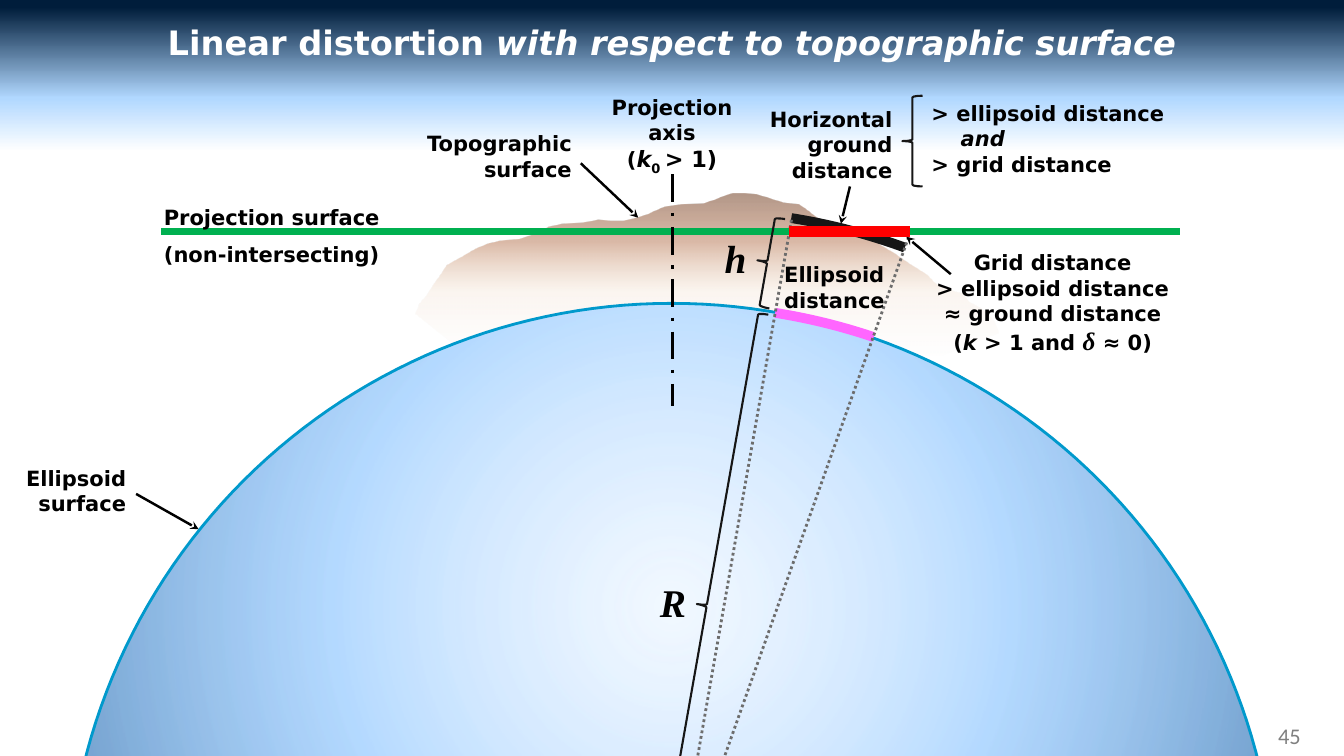
from dataclasses import dataclass
from math import cos, pi, sin

from lxml.etree import SubElement
from pptx import Presentation
from pptx.dml.color import RGBColor as RGB
from pptx.enum.dml import MSO_LINE as DASH
from pptx.enum.shapes import MSO_CONNECTOR as LINK, MSO_SHAPE as FORM
from pptx.enum.text import MSO_ANCHOR as ANCHOR, MSO_AUTO_SIZE as FIT, PP_ALIGN as ALIGN
from pptx.oxml.ns import qn
from pptx.util import Inches, Pt


@dataclass
class Theme:
    font: str = "DejaVu Sans"
    math: str = "Times New Roman"
    plain: str = "Calibri"
    title: int = 24
    label: int = 15
    axis: int = 16
    delta: int = 18
    symbol: int = 28
    black: str = "000000"
    white: str = "FFFFFF"
    dark: str = "161616"
    gray: str = "6D6D6D"
    number: str = "808080"
    green: str = "00B050"
    red: str = "FF0000"
    pink: str = "FF66FF"
    rim: str = "0099CC"


T = Theme()


def write(shape, text, align=ALIGN.LEFT, space=1, indent=None, **base):
    """Fill a shape with text: a string, or (string, format) runs; \\n starts a paragraph."""
    frame = shape.text_frame
    frame.word_wrap = True
    frame.auto_size = FIT.NONE
    runs = [(text, {})] if isinstance(text, str) else text
    para = frame.paragraphs[0]
    paras = [para]
    for part, own in runs:
        look = {"size": T.label, "font": T.font, "color": T.black, "bold": True, **base, **own}
        for n, line in enumerate(part.split("\n")):
            if n:
                para = frame.add_paragraph()
                paras.append(para)
            if not line:
                continue
            run = para.add_run()
            run.text = line
            font = run.font
            font.name, font.size = look["font"], Pt(look["size"])
            font.bold, font.italic = look["bold"], look.get("italic", False)
            font.color.rgb = RGB.from_string(look["color"])
            if "shift" in look:
                font._element.set("baseline", str(look["shift"]))
    for n, para in enumerate(paras):
        para.alignment, para.line_spacing = align, space
        if indent and n == indent[0]:
            para._p.get_or_add_pPr().set("marL", str(Inches(indent[1])))


def stroke(shape, color, width, dash=None, arrow=False):
    line = shape.line
    line.color.rgb, line.width = RGB.from_string(color), Pt(width)
    if dash:
        line.dash_style = dash
    props = shape.element.spPr
    if arrow:
        SubElement(props.find(qn("a:ln")), qn("a:tailEnd"), type="stealth")
    if props.find(qn("a:effectLst")) is None:
        SubElement(props, qn("a:effectLst"))


deck = Presentation()
deck.slide_width, deck.slide_height = Inches(13.33), Inches(7.5)
slide = deck.slides.add_slide(deck.slide_layouts[5])
shapes = slide.shapes

# Title
title = shapes.title
title.left, title.top, title.width, title.height = map(Inches, (0, 0.17, 13.33, 0.5))
title.text_frame.vertical_anchor = ANCHOR.MIDDLE
write(title, [("Linear distortion ", {}),
              ("with respect to topographic surface", {"italic": True})],
      ALIGN.CENTER, size=T.title, color=T.white)

# Terrain and globe
ridge = [
    (4.66, 3.54), (4.12, 3.11), (4.16, 3.01), (4.23, 2.93), (4.3, 2.82), (4.38, 2.71),
    (4.43, 2.63), (4.52, 2.58), (4.61, 2.53), (4.71, 2.47), (4.83, 2.42), (4.95, 2.39),
    (5.15, 2.37), (5.25, 2.34), (5.34, 2.3), (5.44, 2.25), (5.57, 2.22), (5.78, 2.21),
    (5.93, 2.18), (6.05, 2.19), (6.18, 2.19), (6.28, 2.17), (6.41, 2.13), (6.5, 2.09),
    (6.59, 2.05), (6.75, 2.03), (6.97, 2.02), (7.09, 1.98), (7.19, 1.94), (7.26, 1.92),
    (7.38, 1.92), (7.5, 1.93), (7.6, 1.96), (7.76, 2.01), (7.92, 2.03), (7.98, 2.07),
    (8.07, 2.14), (8.14, 2.19), (8.26, 2.24), (8.33, 2.27), (8.49, 2.3), (8.58, 2.33),
    (8.65, 2.38), (8.74, 2.44), (8.86, 2.51), (8.96, 2.58), (9.02, 2.62), (9.18, 2.72),
    (9.27, 2.81), (9.36, 2.86), (9.54, 2.91), (9.6, 2.99), (9.73, 3.06), (9.85, 3.18),
    (9.9, 3.3), (9.3, 3.54)]
steps = 120
dome = [(6.66 - 6 * cos(pi * n / steps), 9.01 - 6 * sin(pi * n / steps))
        for n in range(steps + 1)]
solids = []
for points in (ridge, dome, dome):
    spots = [(Inches(x), Inches(y)) for x, y in points]
    pen = shapes.build_freeform(*spots[0])
    pen.add_line_segments(spots[1:])
    solid = pen.convert_to_shape()
    solid.shadow.inherit = False
    solid.line.fill.background()
    solids.append(solid)
hill, base, globe = solids
base.fill.solid()
base.fill.fore_color.rgb = RGB.from_string(T.white)
stroke(globe, T.rim, 2)

# Gradients: stops are position, colour, opacity; no angle means radial
for item, fill, stops, angle in [
    (slide, slide.background.fill,
     [(80, "FFFFFF", 100), (87, "B1D8FF", 100), (99, "001D3B", 100)], 270),
    (hill, hill.fill,
     [(0, "D6B19C", 0), (40, "D49E6C", 10), (70, "A65528", 40), (100, "663012", 50)], 270),
    (globe, globe.fill,
     [(0, "C2E0FF", 20), (50, "47A3FF", 40), (100, "004C99", 60)], None),
]:
    fill.gradient()
    grad = item.element.find(".//" + qn("a:gradFill"))
    grad.clear()
    grad.set("rotWithShape", "1")
    ramp = SubElement(grad, qn("a:gsLst"))
    for place, color, alpha in stops:
        stop = SubElement(ramp, qn("a:gs"), pos=str(place * 1000))
        tint = SubElement(stop, qn("a:srgbClr"), val=color)
        if alpha < 100:
            SubElement(tint, qn("a:alpha"), val=str(alpha * 1000))
    if angle is None:
        way = SubElement(grad, qn("a:path"), path="circle")
        SubElement(way, qn("a:fillToRect"), {side: "50000" for side in "ltrb"})
    else:
        SubElement(grad, qn("a:lin"), ang=str(angle * 60000), scaled="0")

# Distances along the ellipsoid and ground: arcs from the top, sweep in degrees
for left, top, sweep, color in [(0.75, 3.03, 9.61, T.pink), (0.91, 2.09, 11.13, T.dark)]:
    arc = shapes.add_shape(FORM.ARC, *map(Inches, (left, top, 12, 12)))
    arc.rotation = 9
    arc.adjustments[0], arc.adjustments[1] = 270 * 0.6, (270 + sweep) * 0.6
    arc.fill.background()
    stroke(arc, color, 7)

# Straight lines
arrow = {"color": T.black, "width": 1.75, "arrow": True}
radius = {"color": T.gray, "width": 2, "dash": DASH.ROUND_DOT}
for x1, y1, x2, y2, look in [
    (9.03, 2.3, 6.66, 8.99, radius),
    (7.85, 2.18, 6.66, 8.99, radius),
    (1.6, 2.3, 11.7, 2.3, {"color": T.green, "width": 5}),
    (6.67, 1.73, 6.67, 4.03, {"color": T.black, "width": 2.5, "dash": DASH.LONG_DASH_DOT}),
    (5.76, 1.62, 6.33, 2.16, arrow),
    (8.43, 1.85, 8.34, 2.22, arrow),
    (9.43, 2.72, 8.99, 2.35, arrow),
    (1.35, 4.9, 1.97, 5.25, arrow),
    (7.83, 2.3, 9.03, 2.3, {"color": T.red, "width": 8}),
]:
    stroke(shapes.add_connector(LINK.STRAIGHT, *map(Inches, (x1, y1, x2, y2))), **look)

# Braces
for left, top, height, turn in [(8.95, 0.95, 0.9, 0), (7.51, 2.15, 0.9, 10),
                                (6.91, 3.06, 5.9, 10)]:
    brace = shapes.add_shape(FORM.LEFT_BRACE, *map(Inches, (left, top, 0.2, height)))
    brace.rotation = turn
    brace.fill.background()
    stroke(brace, T.dark, 1.5)

# Labels
mid, right = {"align": ALIGN.CENTER}, {"align": ALIGN.RIGHT}
slant = {"italic": True}
symbol = {"font": T.math, "size": T.symbol, **slant, **mid}
for box, text, look in [
    ((5.79, 0.89, 1.75, 0.88),
     [("Projection\naxis\n(", {}), ("k", {"size": T.axis, **slant}),
      ("0 ", {"size": T.axis, "shift": -25000}), ("> 1)", {"size": T.axis})], mid),
    ((1.5, 1.85, 2.39, 0.81), "Projection surface (non-intersecting)", {"space": 1.5, **mid}),
    ((7.68, 2.55, 1.47, 0.61), "Ellipsoid distance", {}),
    ((3.99, 1.25, 1.78, 0.61), "Topographic surface", right),
    ((7.41, 1.01, 1.54, 0.86), "Horizontal ground distance", right),
    ((9.14, 0.95, 2.69, 0.86),
     [("> ellipsoid distance\n", {}), ("and\n", slant), ("> grid distance", {})],
     {"indent": (1, 0.29)}),
    ((7.03, 2.28, 0.53, 0.57), "h", symbol),
    ((6.41, 5.69, 0.53, 0.57), "R", symbol),
    ((9.05, 2.43, 2.78, 1.16),
     [("Grid distance\n> ellipsoid distance\n≈ ground distance\n(", {}), ("k", slant),
      (" > 1 and ", {}), ("δ", {"font": T.math, "size": T.delta, **slant}),
      (" ≈ 0)", {})], mid),
    ((0, 4.57, 1.35, 0.61), "Ellipsoid surface", right),
    ((10, 7.1, 3, 0.4), "45",
     {"font": T.plain, "size": T.axis, "color": T.number, "bold": False, **right}),
]:
    label = shapes.add_textbox(*map(Inches, box))
    write(label, text, **look)
label.text_frame.vertical_anchor = ANCHOR.MIDDLE

deck.save("out.pptx")
